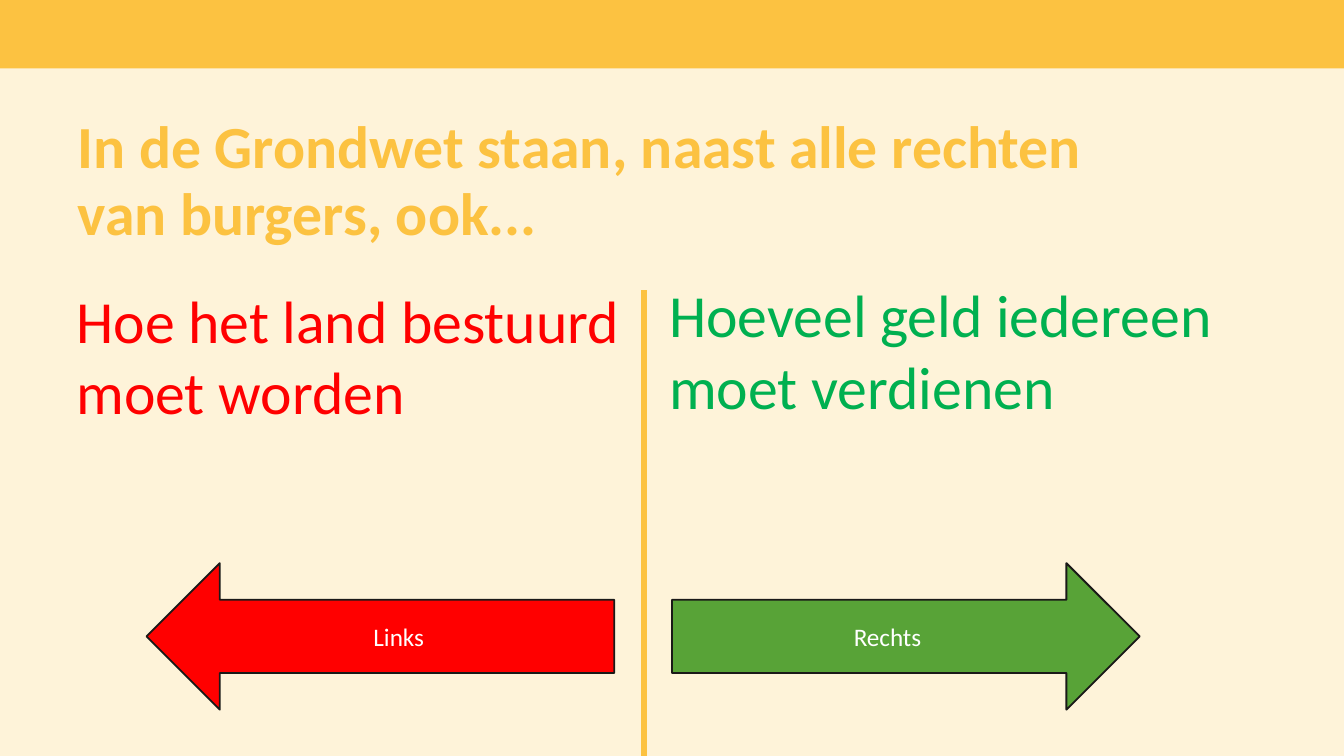
from pptx import Presentation
from pptx.dml.color import RGBColor
from pptx.enum.shapes import MSO_CONNECTOR, MSO_SHAPE as Shape
from pptx.enum.text import MSO_ANCHOR as Anchor, MSO_AUTO_SIZE as AutoSize, PP_ALIGN as Align
from pptx.oxml.ns import qn
from pptx.util import Inches, Pt
from lxml.etree import SubElement

YELLOW = "FCC241"


def paint(color_format, hex_color):
    color_format.rgb = RGBColor.from_string(hex_color)


def write(frame, text, size, color, bold=False):
    frame.word_wrap = True
    frame.text = text
    font = frame.paragraphs[0].runs[0].font
    font.name, font.size, font.bold = "Calibri", Pt(size), bold
    paint(font.color, color)


prs = Presentation()
prs.slide_width = Inches(10)
prs.slide_height = prs.slide_width * 9 // 16
slide = prs.slides.add_slide(prs.slide_layouts[5])
shapes = slide.shapes
slide.background.fill.solid()
paint(slide.background.fill.fore_color, "FEF3D9")

banner = shapes.add_shape(Shape.RECTANGLE, 0, 0, prs.slide_width, Inches(0.51))
banner.shadow.inherit = False
banner.fill.solid()
paint(banner.fill.fore_color, YELLOW)
banner.line.fill.background()

# Question
question = shapes.title
question.left, question.top = Inches(0.58), Inches(0.79)
question.width, question.height = Inches(7.73), Inches(0.98)
frame = question.text_frame
write(frame, "In de Grondwet staan, naast alle rechten van burgers, ook...", 32, YELLOW, bold=True)
frame.auto_size = AutoSize.NONE
frame.vertical_anchor = Anchor.TOP
frame.margin_left = frame.margin_right = frame.margin_bottom = 0
frame.margin_top = Inches(0.05)
frame.paragraphs[0].alignment = Align.LEFT
frame.paragraphs[0].line_spacing = Pt(36)

divider = shapes.add_connector(
    MSO_CONNECTOR.STRAIGHT, Inches(4.79), Inches(2.16), Inches(4.79), prs.slide_height)
paint(divider.line.color, YELLOW)
divider.line.width = Pt(3)
SubElement(divider._element.spPr, qn("a:effectLst"))

# Answers: text, text colour, left, top, width
answers = [
    ("Hoe het land bestuurd moet worden", "FF0000", 0.47, 2.06, 4.4),
    ("Hoeveel geld iedereen moet verdienen", "00B050", 4.88, 2.02, 5.21),
]
for text, color, left, top, width in answers:
    answer = shapes.add_textbox(Inches(left), Inches(top), Inches(width), Inches(1.18))
    write(answer.text_frame, text, 32, color)
    answer.text_frame.auto_size = AutoSize.SHAPE_TO_FIT_TEXT

# Direction arrows: label, preset, fill, left
directions = [
    ("Rechts", Shape.RIGHT_ARROW, "58A337", 5),
    ("Links", Shape.LEFT_ARROW, "FF0000", 1.09),
]
for label, preset, color, left in directions:
    arrow = shapes.add_shape(preset, Inches(left), Inches(4.19), Inches(3.48), Inches(1.09))
    arrow.shadow.inherit = False
    arrow.fill.solid()
    paint(arrow.fill.fore_color, color)
    paint(arrow.line.color, "1A1918")
    arrow.line.width = Pt(1)
    write(arrow.text_frame, label, 13.5, "FFFFFF")
    arrow.text_frame.vertical_anchor = Anchor.MIDDLE
    arrow.text_frame.paragraphs[0].alignment = Align.CENTER

prs.save("out.pptx")
